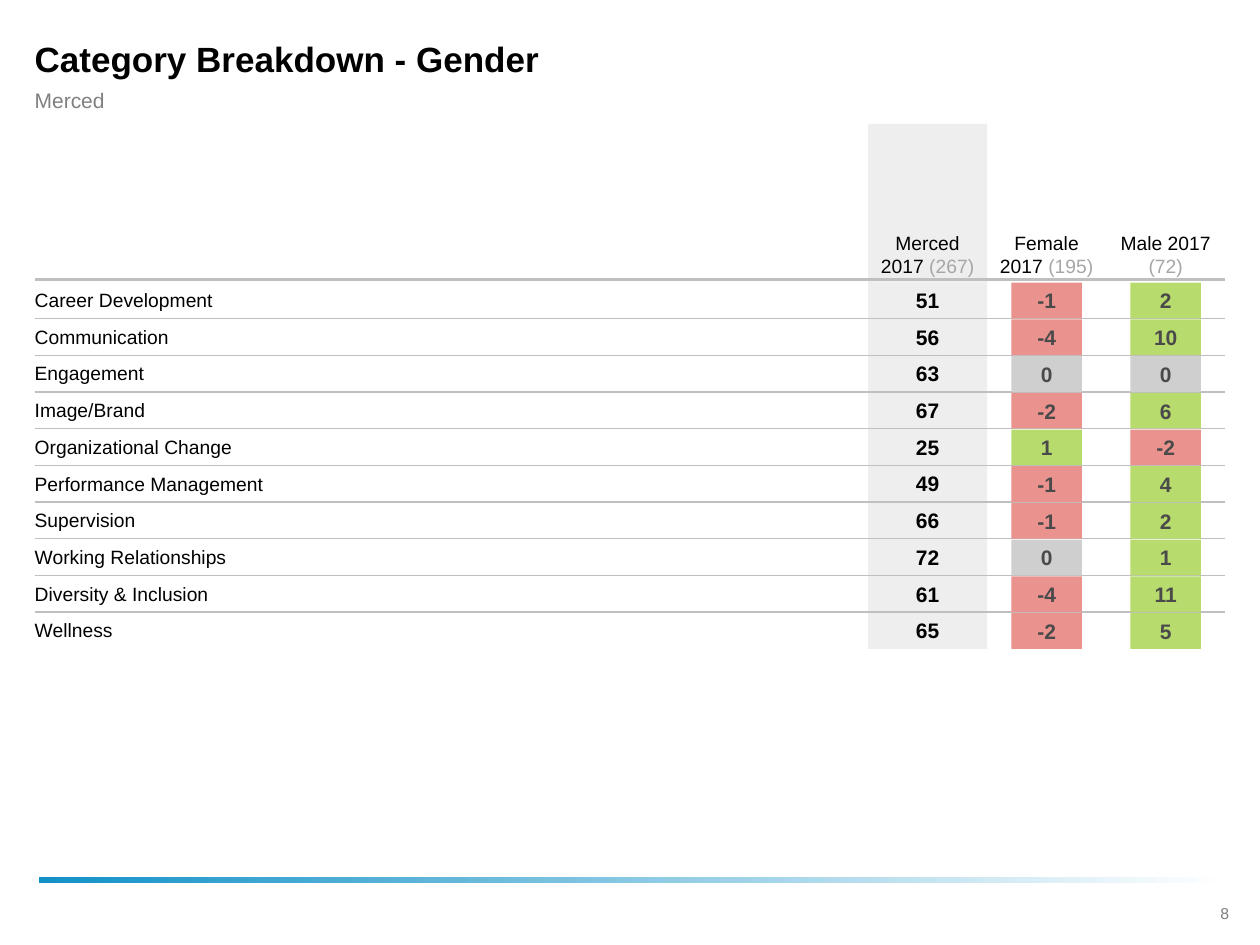
from pptx import Presentation
from pptx.dml.color import RGBColor
from pptx.enum.shapes import MSO_CONNECTOR, MSO_SHAPE
from pptx.enum.text import MSO_ANCHOR, MSO_AUTO_SIZE, PP_ALIGN
from pptx.oxml.ns import qn
from pptx.util import Cm, Pt
from lxml.etree import SubElement

COLORS = {
    "black": "000000",
    "subtitle": "808080",
    "page": "7F7F7F",
    "count": "A6A6A6",
    "score": "4A4A4A",
    "rule": "BFBFBF",
    "band": "EEEEEE",
    "negative": "E9928E",
    "positive": "B7DB6C",
    "neutral": "CFCFCF",
    "bar_start": "1291C7",
    "bar_end": "FFFFFF",
}

LEFT, WIDTH, LABEL_WIDTH = 0.7, 24, 16.8
COLUMN_LEFT, COLUMN_WIDTH = 17.5, 2.4
HEADER_TOP, HEADER_HEIGHT, HEADER_RULE = 2.5, 3.18, 5.64
ROWS_TOP, ROW_HEIGHT = 5.68, 0.74
CELL_INSETS = (0.08, 0.08, 0.08, 0.08)

HEADERS = [("Merced 2017 ", "(267)"), ("Female 2017 ", "(195)"), ("Male 2017 ", "(72)")]
ROWS = [
    ("Career Development", 51, -1, 2),
    ("Communication", 56, -4, 10),
    ("Engagement", 63, 0, 0),
    ("Image/Brand", 67, -2, 6),
    ("Organizational Change", 25, 1, -2),
    ("Performance Management", 49, -1, 4),
    ("Supervision", 66, -1, 2),
    ("Working Relationships", 72, 0, 1),
    ("Diversity & Inclusion", 61, -4, 11),
    ("Wellness", 65, -2, 5),
]


def rgb(name):
    return RGBColor.from_string(COLORS[name])


def write_text(shape, runs, size, color="black", bold=False, align=PP_ALIGN.LEFT,
               anchor=MSO_ANCHOR.MIDDLE, insets=(0, 0, 0, 0), wrap=True):
    frame = shape.text_frame
    frame.word_wrap = wrap
    frame.vertical_anchor = anchor
    frame.margin_left, frame.margin_top, frame.margin_right, frame.margin_bottom = map(Cm, insets)
    paragraph = frame.paragraphs[0]
    paragraph.alignment = align
    paragraph.font.name = "Arial"
    paragraph.font.size = Pt(size)
    paragraph.font.bold = bold
    paragraph.font.color.rgb = rgb(color)
    for text, run_color in runs:
        run = paragraph.add_run()
        run.text = text
        run.font.color.rgb = rgb(run_color or color)


def add_text(slide, left, top, width, height, text, size, **style):
    box = slide.shapes.add_textbox(Cm(left), Cm(top), Cm(width), Cm(height))
    runs = [(text, None)] if isinstance(text, str) else text
    write_text(box, runs, size, **style)
    return box


def add_rectangle(slide, left, top, width, height, color=None):
    shape = slide.shapes.add_shape(MSO_SHAPE.RECTANGLE, Cm(left), Cm(top), Cm(width), Cm(height))
    shape.shadow.inherit = False
    shape.line.fill.background()
    if color:
        shape.fill.solid()
        shape.fill.fore_color.rgb = rgb(color)
    return shape


def add_rule(slide, top, weight):
    rule = slide.shapes.add_connector(
        MSO_CONNECTOR.STRAIGHT, Cm(LEFT), Cm(top), Cm(LEFT + WIDTH), Cm(top))
    rule.line.color.rgb = rgb("rule")
    rule.line.width = Pt(weight)
    SubElement(rule._element.spPr, qn("a:effectLst"))


def add_footer(slide):
    bar = add_rectangle(slide, 0.78, 17.68, 23.93, 0.13)
    bar.fill.gradient()
    bar.fill.gradient_angle = 0
    for stop, color in zip(bar.fill.gradient_stops, ("bar_start", "bar_end")):
        stop.color.rgb = rgb(color)
    number = add_text(slide, 24.03, 18.08, 1.32, 0.64, "8", 9, color="page",
                      align=PP_ALIGN.CENTER, anchor=MSO_ANCHOR.TOP,
                      insets=(0.25, 0.13, 0.25, 0.13))
    number.text_frame.auto_size = MSO_AUTO_SIZE.SHAPE_TO_FIT_TEXT


def add_header(slide):
    add_rectangle(slide, COLUMN_LEFT, HEADER_TOP, COLUMN_WIDTH, HEADER_HEIGHT, "band")
    add_rule(slide, HEADER_RULE, 1.5)
    for column, (group, count) in enumerate(HEADERS):
        add_text(slide, COLUMN_LEFT + column * COLUMN_WIDTH, HEADER_TOP,
                 COLUMN_WIDTH, HEADER_HEIGHT, [(group, "black"), (count, "count")], 11,
                 align=PP_ALIGN.CENTER, anchor=MSO_ANCHOR.BOTTOM, insets=CELL_INSETS)


def add_score(slide, column, top, score):
    color = "positive" if score > 0 else "negative" if score < 0 else "neutral"
    left = COLUMN_LEFT + column * COLUMN_WIDTH + 0.49
    tile = add_rectangle(slide, left, top + 0.02, 1.42, 0.72, color)
    write_text(tile, [(str(score), None)], 12, color="score", bold=True,
               align=PP_ALIGN.CENTER, insets=(0, 0.13, 0, 0.13), wrap=False)


def add_row(slide, index, label, overall, *scores):
    top = ROWS_TOP + index * ROW_HEIGHT
    if index < len(ROWS) - 1:
        add_rule(slide, top + ROW_HEIGHT, 0.75)
    add_text(slide, LEFT, top + 0.07, LABEL_WIDTH, 0.59, label, 11)
    add_text(slide, COLUMN_LEFT, top, COLUMN_WIDTH, ROW_HEIGHT, str(overall), 12,
             bold=True, align=PP_ALIGN.CENTER, insets=CELL_INSETS)
    for column, score in enumerate(scores, 1):
        add_score(slide, column, top, score)


def main():
    presentation = Presentation()
    presentation.slide_width, presentation.slide_height = Cm(25.4), Cm(19.05)
    slide = presentation.slides.add_slide(presentation.slide_layouts[6])
    add_footer(slide)
    add_text(slide, LEFT, 0.7, WIDTH, 0.97, "Category Breakdown - Gender", 20,
             bold=True, insets=(0, 0, 0.9, 0))
    for index in reversed(range(len(ROWS))):
        add_rectangle(slide, COLUMN_LEFT, ROWS_TOP + index * ROW_HEIGHT,
                      COLUMN_WIDTH, ROW_HEIGHT, "band")
    add_header(slide)
    for index, row in enumerate(ROWS):
        add_row(slide, index, *row)
    add_text(slide, LEFT, 1.74, WIDTH, 0.54, "Merced", 12, color="subtitle",
             insets=(0, 0, 0.9, 0))
    presentation.save("out.pptx")


if __name__ == "__main__":
    main()
